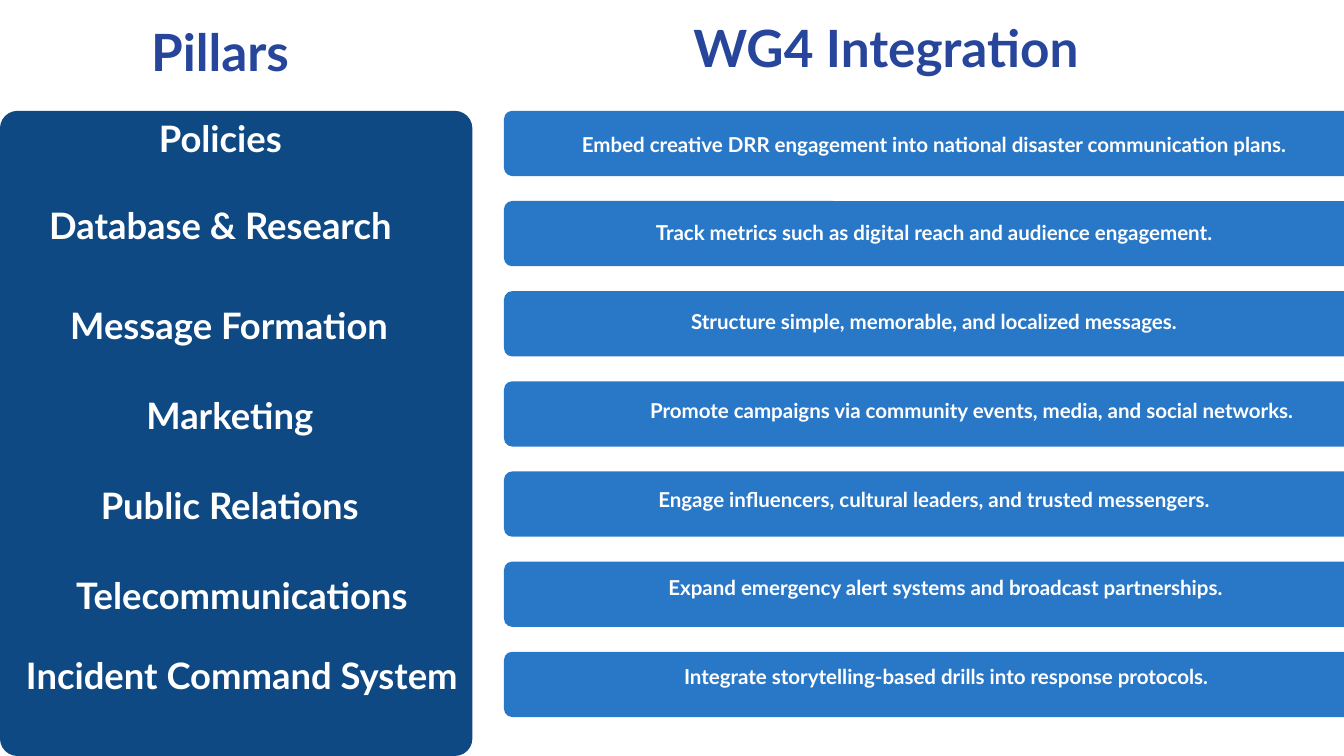
import collections

import pptx
import pptx.dml.color
import pptx.enum.shapes
import pptx.enum.text
import pptx.util
from lxml import etree

COLUMNS, ROWS = 20, 11.25
UNIT = pptx.util.Inches(1)
FONT = "Lato"
COLORS = {"heading": "26459B", "panel": "0F4984", "bar": "2978C8", "text": "FFFFFF"}

Box = collections.namedtuple("Box", "column row columns rows")
TextStyle = collections.namedtuple("TextStyle", "size leading color")
Pillar = collections.namedtuple("Pillar", "name center row columns")
Action = collections.namedtuple("Action", "message center columns bar_columns")

HEADING = TextStyle(55, 78, "heading")
PILLAR = TextStyle(39, 55, "text")
ACTION = TextStyle(22, 30, "text")

PILLARS = [
    Pillar("Policies", 3.28, -0.04, 2.1),
    Pillar("Database & Research", 3.28, 1.26, 5.68),
    Pillar("Message Formation", 3.41, 2.75, 5.28),
    Pillar("Marketing", 3.42, 4.09, 2.74),
    Pillar("Public Relations", 3.42, 5.43, 4.37),
    Pillar("Telecommunications", 3.6, 6.77, 5.65),
    Pillar("Incident Command System", 3.6, 7.96, 7.2),
]
ACTIONS = [
    Action("Embed creative DRR engagement into national disaster communication plans.", 6.4, 11.58, 13.38),
    Action("Track metrics such as digital reach and audience engagement.", 6.4, 9.19, 14.87),
    Action("Structure simple, memorable, and localized messages.", 6.4, 8.07, 15.88),
    Action("Promote campaigns via community events, media, and social networks.", 6.96, 10.61, 15.88),
    Action("Engage influencers, cultural leaders, and trusted messengers.", 6.4, 9.14, 14.2),
    Action("Expand emergency alert systems and broadcast partnerships.", 6.57, 9.18, 15.12),
    Action("Integrate storytelling-based drills into response protocols.", 6.58, 8.71, 16.42),
]


def rgb(name):
    """Return the named colour."""
    return pptx.dml.color.RGBColor.from_string(COLORS[name])


def to_emu(box):
    """Turn columns and rows into slide lengths."""
    return [round(length * UNIT) for length in box]


def write(shape, wording, style):
    """Fill a text shape with one centred bold line."""
    frame = shape.text_frame
    frame.text = wording
    frame.word_wrap = True
    frame.auto_size = pptx.enum.text.MSO_AUTO_SIZE.NONE
    frame.vertical_anchor = pptx.enum.text.MSO_ANCHOR.TOP
    frame.margin_left = frame.margin_right = frame.margin_top = frame.margin_bottom = 0
    paragraph = frame.paragraphs[0]
    paragraph.alignment = pptx.enum.text.PP_ALIGN.CENTER
    paragraph.line_spacing = pptx.util.Pt(style.leading)
    font = paragraph.runs[0].font
    font.name, font.size, font.bold = FONT, pptx.util.Pt(style.size), True
    font.color.rgb = rgb(style.color)


def add_label(slide, box, wording, style):
    """Add a text box."""
    write(slide.shapes.add_textbox(*to_emu(box)), wording, style)


def add_rounded(slide, box, radius, color):
    """Add a plain rounded rectangle with a corner radius in grid units."""
    shape = slide.shapes.add_shape(
        pptx.enum.shapes.MSO_SHAPE.ROUNDED_RECTANGLE, *to_emu(box))
    shape.adjustments[0] = radius / min(box.columns, box.rows)
    shape.shadow.inherit = False
    shape.fill.solid()
    shape.fill.fore_color.rgb = rgb(color)
    shape.line.fill.background()


def add_headings(slide, box):
    """Place the two column headings."""
    add_label(slide, Box(box.column + 2.09, box.row + 0.13, 2.37, 1.04), "Pillars", HEADING)
    title = slide.shapes.title
    title.left, title.top, title.width, title.height = to_emu(
        Box(box.column + 10.08, box.row + 0.07, 6.21, 1.04))
    write(title, "WG4 Integration", HEADING)


def add_pillars(slide, box):
    """Place the panel of pillar names."""
    add_rounded(slide, box, 0.26, "panel")
    for pillar in PILLARS:
        left = box.column + pillar.center - pillar.columns / 2
        add_label(slide, Box(left, box.row + pillar.row, pillar.columns, 0.74),
                  pillar.name, PILLAR)


def add_actions(slide, box):
    """Place one bar with its message for each pillar."""
    bar_rows = 0.97
    bar_pitch = (box.rows - bar_rows) / (len(ACTIONS) - 1)
    message_pitch = 1.32
    for index, action in enumerate(ACTIONS):
        add_rounded(slide, Box(box.column, box.row + index * bar_pitch,
                               action.bar_columns, bar_rows), 0.12, "bar")
        left = box.column + action.center - action.columns / 2
        add_label(slide, Box(left, box.row + 0.26 + index * message_pitch,
                             action.columns, 0.81), action.message, ACTION)


def main():
    """Build and save the slide."""
    deck = pptx.Presentation()
    deck.slide_width, deck.slide_height = round(COLUMNS * UNIT), round(ROWS * UNIT)
    slide = deck.slides.add_slide(deck.slide_layouts.get_by_name("Title Only"))
    add_headings(slide, Box(0, 0, COLUMNS, 1.65))
    add_pillars(slide, Box(0, 1.65, 7.03, 9.6))
    add_actions(slide, Box(7.5, 1.65, 12.5, 9.02))
    deck.save("out.pptx")


if __name__ == "__main__":
    main()
